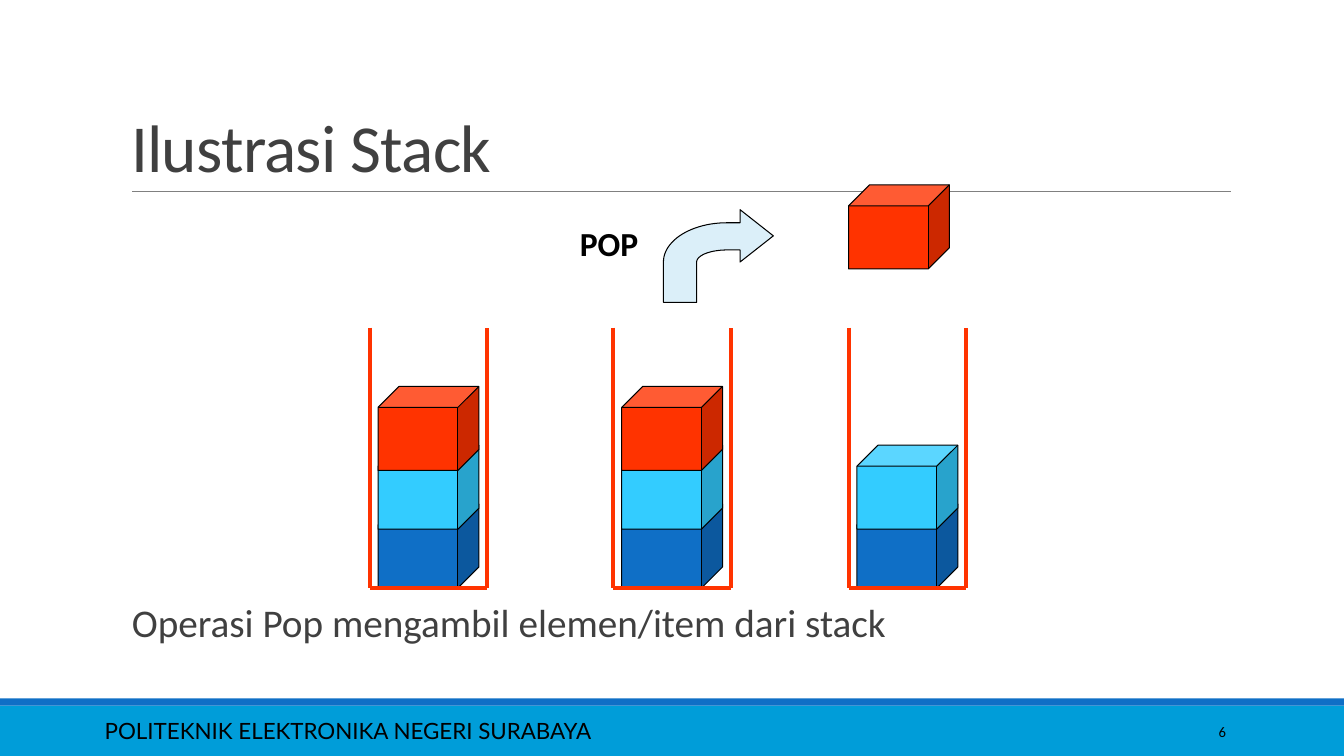
import math
from dataclasses import dataclass

import lxml.etree
import pptx
import pptx.dml.color
import pptx.enum.shapes
import pptx.enum.text
import pptx.oxml.ns
import pptx.util

TITLE = "Ilustrasi Stack"
EXPLANATION = "Operasi Pop mengambil elemen/item dari stack"
OPERATION = "POP"
INSTITUTE = "POLITEKNIK ELEKTRONIKA NEGERI SURABAYA"
PAGE = "6"


@dataclass(frozen=True)
class Theme:
    footer: str = "009DD9"
    blue: str = "0F6FC6"
    cyan: str = "33CCFF"
    red: str = "FF3300"
    arrow: str = "DBEFF9"
    rule: str = "808080"
    text: str = "404040"
    black: str = "000000"
    font: str = "Calibri"
    footer_font: str = "Lato"
    title_size: float = 48
    body_size: float = 28
    label_size: float = 24
    footer_size: float = 16
    page_size: float = 10.5
    hairline: float = 0.5
    outline: float = 0.75
    wall: float = 3


THEME = Theme()
WIDTH, HEIGHT = 13.33, 7.5

# Illustration grid: twelve columns and rows to the inch
UNIT = 1 / 12
CUBE_WIDTH, CUBE_HEIGHT, CUBE_STEP = 12, 10, 7
BIN_WIDTH, BIN_TOP, BIN_BOTTOM = 14, 39, 70
STACKS = [  # left column of the bin, items from bottom to top
    (44, (THEME.blue, THEME.cyan, THEME.red)),
    (73, (THEME.blue, THEME.cyan, THEME.red)),
    (101, (THEME.blue, THEME.cyan)),
]
POPPED_ITEM = (101, 22, THEME.red)

SHAPE = pptx.enum.shapes.MSO_SHAPE
ALIGN = pptx.enum.text.PP_ALIGN
ANCHOR = pptx.enum.text.MSO_ANCHOR
qn = pptx.oxml.ns.qn
inches = pptx.util.Inches


def rgb(colour):
    return pptx.dml.color.RGBColor.from_string(colour)


def paint(shape, fill, outlined=True):
    shape.shadow.inherit = False
    shape.fill.solid()
    shape.fill.fore_color.rgb = rgb(fill)
    if outlined:
        shape.line.color.rgb = rgb(THEME.black)
        shape.line.width = pptx.util.Pt(THEME.outline)
    else:
        shape.line.fill.background()


def add_line(shapes, start, end, colour, width):
    line = shapes.add_connector(pptx.enum.shapes.MSO_CONNECTOR.STRAIGHT,
                                *map(inches, (*start, *end)))
    line.line.color.rgb = rgb(colour)
    line.line.width = pptx.util.Pt(width)
    lxml.etree.SubElement(line._element.spPr, qn("a:effectLst"))


def write(box, text, size, colour, font=THEME.font, align=ALIGN.LEFT,
          anchor=ANCHOR.MIDDLE, bold=False):
    """Fill a box with one formatted paragraph and return the paragraph."""
    frame = box.text_frame
    frame.word_wrap = True
    frame.auto_size = pptx.enum.text.MSO_AUTO_SIZE.NONE
    frame.vertical_anchor = anchor
    paragraph = frame.paragraphs[0]
    paragraph.text = text
    paragraph.alignment = align
    paragraph.space_before = pptx.util.Pt(0)
    paragraph.font.name = font
    paragraph.font.size = pptx.util.Pt(size)
    paragraph.font.bold = bold
    paragraph.font.color.rgb = rgb(colour)
    return paragraph


def place(box, left, top, width, height):
    box.left, box.top, box.width, box.height = map(inches, (left, top, width, height))


def add_cube(shapes, column, row, colour):
    cube = shapes.add_shape(SHAPE.CUBE, *(inches(n * UNIT) for n in
                                          (column, row, CUBE_WIDTH, CUBE_HEIGHT)))
    cube.adjustments[0] = 0.25
    paint(cube, colour)


def add_stack(slide, column, items):
    """Draw an open bin whose front wall crosses only the lowest item."""
    shapes = slide.shapes.add_group_shape().shapes
    corners = [(x * UNIT, y * UNIT) for x, y in (
        (column, BIN_TOP), (column, BIN_BOTTOM),
        (column + BIN_WIDTH, BIN_BOTTOM), (column + BIN_WIDTH, BIN_TOP))]
    for level, colour in enumerate(items):
        add_cube(shapes, column + 1, BIN_BOTTOM - CUBE_HEIGHT - level * CUBE_STEP, colour)
        if level == 0:
            for start, end in zip(corners, corners[1:]):
                add_line(shapes, start, end, THEME.red, THEME.wall)


def bend(radius_x, radius_y, first, last, steps=24):
    """Points of an elliptical arc around the arrow's bend, angles in degrees."""
    angles = (math.radians(first + (last - first) * i / steps) for i in range(steps + 1))
    return [(7.21 + radius_x * math.cos(a), 2.6 - radius_y * math.sin(a)) for a in angles]


def add_pop(slide):
    shapes = slide.shapes.add_group_shape().shapes
    label = shapes.add_textbox(*map(inches, (67 * UNIT, 26 * UNIT, 11 * UNIT, 0.51)))
    write(label, OPERATION, THEME.label_size, THEME.black,
          align=ALIGN.CENTER, anchor=ANCHOR.TOP, bold=True)
    outline = [(7.67, 2.34), (7.34, 2.08), (7.34, 2.21), *bend(0.63, 0.39, 90, 180),
               (6.58, 3), (6.91, 3), *bend(0.3, 0.12, 180, 90), (7.34, 2.48), (7.34, 2.6)]
    points = [(inches(x), inches(y)) for x, y in outline]
    builder = shapes.build_freeform(*points[0], scale=1.0)
    builder.add_line_segments(points[1:], close=True)
    paint(builder.convert_to_shape(), THEME.arrow)


def add_frame(slide):
    """Draw the footer bands, the title rule and the footer texts."""
    for top, height, colour in ((7, 0.5, THEME.footer), (6.93, 0.07, THEME.blue)):
        band = slide.shapes.add_shape(SHAPE.RECTANGLE,
                                      *map(inches, (0, top, WIDTH, height)))
        paint(band, colour, outlined=False)
    add_line(slide.shapes, (1.31, 1.9), (12.21, 1.9), THEME.rule, THEME.hairline)
    institute = slide.shapes.add_textbox(*map(inches, (0.94, 7.05, 8.41, 0.4)))
    write(institute, INSTITUTE, THEME.footer_size, THEME.black, THEME.footer_font)
    page = slide.shapes.add_textbox(*map(inches, (10.83, 7.06, 1.43, 0.4)))
    write(page, PAGE, THEME.page_size, THEME.black, align=ALIGN.RIGHT)


def add_texts(slide):
    title, body = slide.placeholders
    place(title, 1.2, 0.31, 11, 1.59)
    heading = write(title, TITLE, THEME.title_size, THEME.text, anchor=ANCHOR.BOTTOM)
    heading.line_spacing = 0.85
    heading._p.pPr.find(qn("a:defRPr")).set("spc", "-50")

    place(body, 1.2, 5.94, 11, 0.47)
    body.text_frame.margin_left = body.text_frame.margin_right = 0
    properties = body.text_frame.paragraphs[0]._p.get_or_add_pPr()
    properties.set("marL", str(inches(0.1)))
    properties.set("indent", str(inches(-0.1)))
    lxml.etree.SubElement(properties, qn("a:buChar")).set("char", " ")
    explanation = write(body, EXPLANATION, THEME.body_size, THEME.text, anchor=ANCHOR.TOP)
    explanation.line_spacing = 0.9
    explanation.space_after = pptx.util.Pt(2)


def main():
    deck = pptx.Presentation()
    deck.slide_width, deck.slide_height = inches(WIDTH), inches(HEIGHT)
    slide = deck.slides.add_slide(deck.slide_layouts[1])
    add_frame(slide)
    add_texts(slide)
    for column, items in STACKS:
        add_stack(slide, column, items)
    add_pop(slide)
    add_cube(slide.shapes, *POPPED_ITEM)
    deck.save("out.pptx")


if __name__ == "__main__":
    main()
